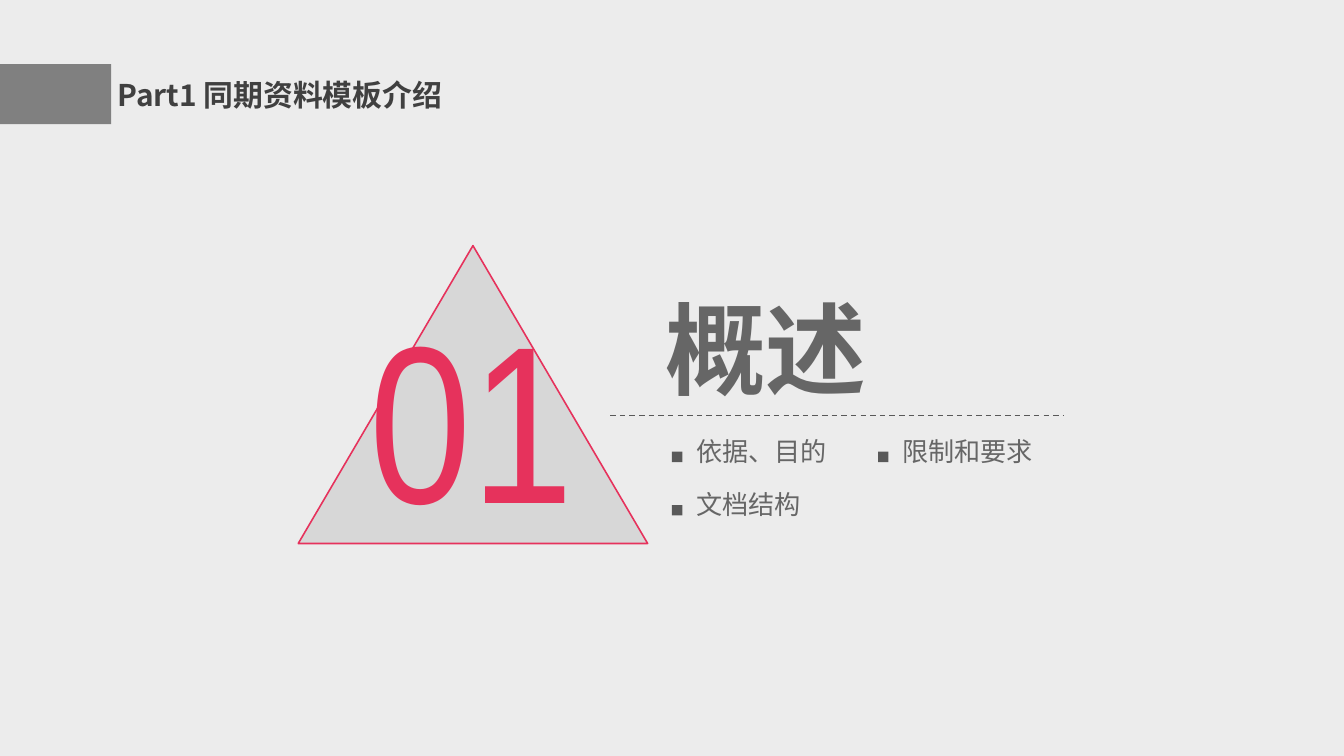
from lxml.etree import SubElement
from pptx import Presentation
from pptx.dml.color import RGBColor
from pptx.enum.dml import MSO_LINE
from pptx.enum.shapes import MSO_CONNECTOR, MSO_SHAPE
from pptx.enum.text import MSO_ANCHOR, MSO_AUTO_SIZE
from pptx.oxml.ns import qn
from pptx.util import Pt

COLORS = {
    "background": "ECECEC",
    "tab": "808080",
    "title": "404040",
    "accent": "E6325C",
    "gray": "595959",
}
CJK_FONT = "Noto Sans CJK SC"
TOPICS = ["依据、目的", "限制和要求", "文档结构"]


def set_color(fill, color, opacity=100):
    fill.solid()
    fill.fore_color.rgb = RGBColor.from_string(COLORS[color])
    if opacity < 100:
        color_element = fill._xPr.find(qn("a:solidFill"))[0]
        SubElement(color_element, qn("a:alpha"), val=str(opacity * 1000))


def add_filled_shape(slide, kind, box, color, opacity=100):
    shape = slide.shapes.add_shape(kind, *map(Pt, box))
    shape.shadow.inherit = False
    set_color(shape.fill, color, opacity)
    shape.line.fill.background()
    return shape


def add_text(slide, box, text, color, font_format, opacity=100, frame_format=None):
    frame = slide.shapes.add_textbox(*map(Pt, box)).text_frame
    frame_values = {"word_wrap": False, "auto_size": MSO_AUTO_SIZE.SHAPE_TO_FIT_TEXT}
    for name, value in (frame_format or frame_values).items():
        setattr(frame, name, value)
    run = frame.paragraphs[0].add_run()
    run.text = text
    set_color(run.font.fill, color, opacity)
    for name, value in font_format.items():
        setattr(run.font, name, value)
    SubElement(run._r.get_or_add_rPr(), qn("a:ea"), typeface=font_format["name"])


def add_header(slide, left, top, width, height):
    # Gray tab at the slide edge, then the part title
    tab_width = 59.5
    add_filled_shape(slide, MSO_SHAPE.RECTANGLE, (left, top, tab_width, height), "tab")
    title_left = left + tab_width - 3.5
    add_text(
        slide, (title_left, top - 0.75, width - title_left, height + 1.5),
        "Part1 同期资料模板介绍", "title",
        {"name": CJK_FONT, "size": Pt(16), "bold": True},
        frame_format={"word_wrap": True, "vertical_anchor": MSO_ANCHOR.MIDDLE},
    )


def add_number_badge(slide, left, top, width, height):
    # Outlined triangle with the section number over it
    triangle = add_filled_shape(
        slide, MSO_SHAPE.ISOSCELES_TRIANGLE, (left, top, width, height), "gray", 14)
    set_color(triangle.line.fill, "accent")
    triangle.line.width = Pt(0.85)
    add_text(slide, (left + 31, top + 14.4, 126, 152.6), "01", "accent",
             {"name": "Arial Narrow", "size": Pt(120)})


def add_section_title(slide, left, top, width, height):
    # Large heading above a dashed rule
    add_text(slide, (left + 22.3, top, 124, height), "概述", "gray",
             {"name": CJK_FONT, "size": Pt(54), "bold": True}, 91)
    rule_top = top + height
    rule = slide.shapes.add_connector(
        MSO_CONNECTOR.STRAIGHT, Pt(left), Pt(rule_top), Pt(left + width), Pt(rule_top))
    SubElement(rule._element.spPr, qn("a:effectLst"))
    set_color(rule.line.fill, "gray")
    rule.line.width = Pt(0.75)
    rule.line.dash_style = MSO_LINE.DASH


def add_topics(slide, left, top, column_pitch, row_pitch):
    # Square markers and topic labels, two to a row
    marker = 5.6
    for index, topic in enumerate(TOPICS):
        row, column = divmod(index, 2)
        x = left + column * column_pitch
        y = top + row * row_pitch
        add_filled_shape(slide, MSO_SHAPE.RECTANGLE, (x, y + 12.3, marker, marker), "gray")
        add_text(slide, (x + marker + 0.2, y, 14.4 + 14 * len(topic), 24.5), topic, "gray",
                 {"name": CJK_FONT, "size": Pt(14)}, 91)


def main():
    presentation = Presentation()
    presentation.slide_width = Pt(720)
    presentation.slide_height = Pt(405)
    slide = presentation.slides.add_slide(presentation.slide_layouts[6])
    set_color(slide.background.fill, "background")

    add_header(slide, 0, 34.4, 292.3, 32.1)
    add_number_badge(slide, 159.8, 131.6, 187.2, 159.6)
    add_section_title(slide, 326.9, 150.2, 242.8, 72.3)
    add_topics(slide, 360, 229.7, 110.4, 28.6)
    presentation.save("out.pptx")


if __name__ == "__main__":
    main()
